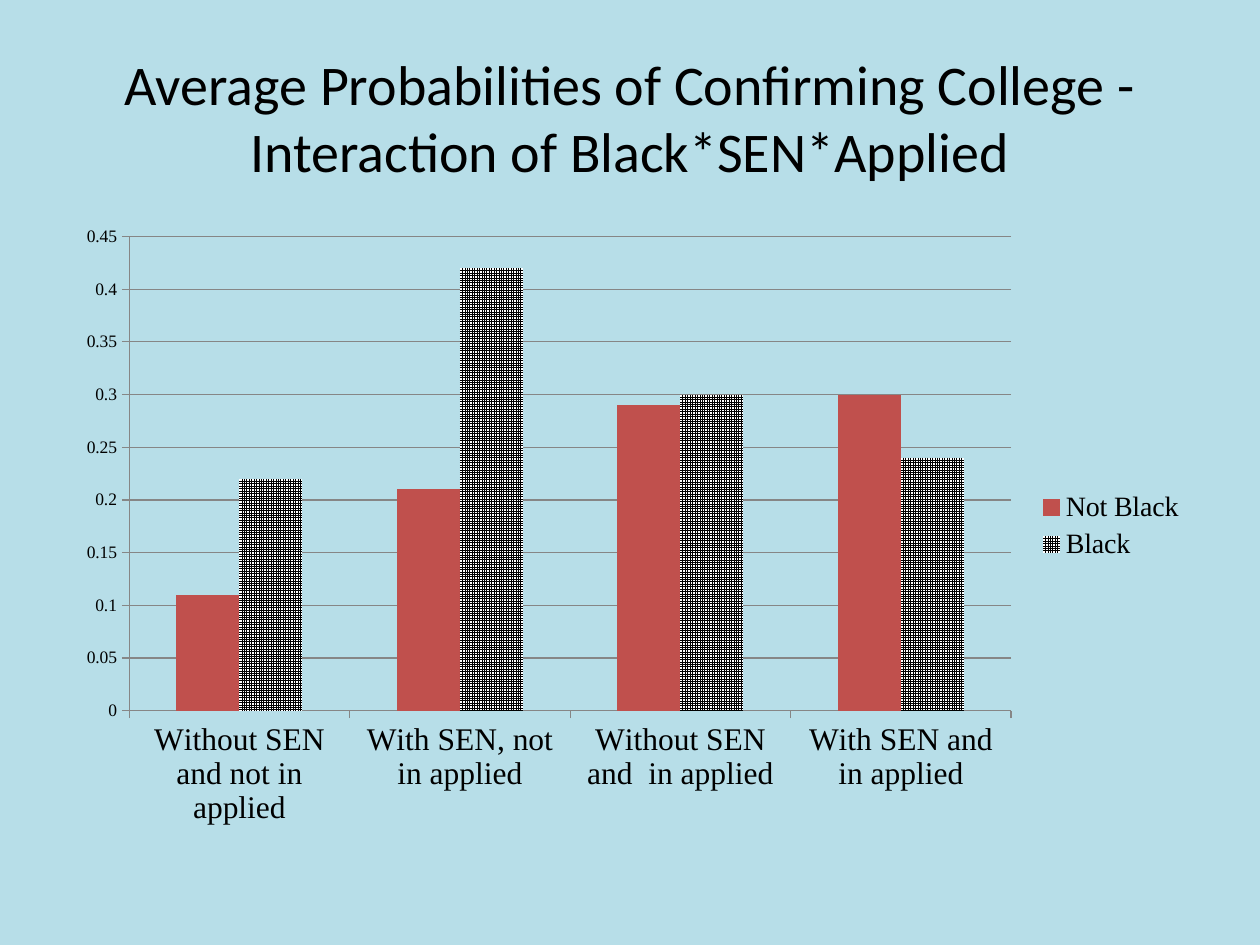
from pptx import Presentation
from pptx.chart.data import CategoryChartData
from pptx.dml.color import RGBColor
from pptx.enum.chart import XL_CHART_TYPE, XL_LEGEND_POSITION, XL_TICK_MARK
from pptx.enum.dml import MSO_PATTERN
from pptx.enum.text import MSO_ANCHOR, PP_ALIGN
from pptx.util import Inches, Pt

BACKGROUND = RGBColor(0xB7, 0xDE, 0xE8)
BLACK = RGBColor(0, 0, 0)
WHITE = RGBColor(0xFF, 0xFF, 0xFF)
RED = RGBColor(0xC0, 0x50, 0x4D)
GRAY = RGBColor(0x86, 0x86, 0x86)

TITLE = "Average Probabilities of Confirming College - Interaction of Black*SEN*Applied"
CATEGORIES = [
    "Without SEN and not in applied",
    "With SEN, not in applied",
    "Without SEN and  in applied",
    "With SEN and in applied",
]
SERIES = {
    "Not Black": (0.11, 0.21, 0.29, 0.3),
    "Black": (0.22, 0.42, 0.3, 0.24),
}


def style_font(font, size, name="Times New Roman"):
    font.name = name
    font.size = Pt(size)
    font.color.rgb = BLACK


def add_title(slide):
    title = slide.shapes.title
    title.left, title.top = Inches(0.5), Inches(0.3)
    title.width, title.height = Inches(9), Inches(1.25)
    tf = title.text_frame
    tf.word_wrap = True
    tf.vertical_anchor = MSO_ANCHOR.MIDDLE
    p = tf.paragraphs[0]
    p.alignment = PP_ALIGN.CENTER
    r = p.add_run()
    r.text = TITLE
    style_font(r.font, 32, "Calibri")


def add_probability_chart(slide):
    data = CategoryChartData(number_format="General")
    data.categories = CATEGORIES
    for name, values in SERIES.items():
        data.add_series(name, values)
    chart = slide.shapes.add_chart(
        XL_CHART_TYPE.COLUMN_CLUSTERED,
        Inches(0.51), Inches(1.7), Inches(9), Inches(4.95), data,
    ).chart
    chart.has_title = False
    style_font(chart.font, 10)

    plot = chart.plots[0]
    plot.vary_by_categories = False
    plot.gap_width = 150
    not_black, black = (s.format.fill for s in plot.series)
    not_black.solid()
    not_black.fore_color.rgb = RED
    black.patterned()
    black.pattern = MSO_PATTERN.SMALL_GRID
    black.fore_color.rgb = BLACK
    black.back_color.rgb = WHITE

    value_axis = chart.value_axis
    value_axis.minimum_scale, value_axis.maximum_scale = 0, 0.45
    value_axis.major_unit = 0.05
    value_axis.has_major_gridlines = True
    value_axis.major_gridlines.format.line.color.rgb = GRAY
    for axis, size in ((chart.category_axis, 18), (value_axis, 10)):
        axis.major_tick_mark = XL_TICK_MARK.OUTSIDE
        axis.format.line.color.rgb = GRAY
        style_font(axis.tick_labels.font, size)

    chart.has_legend = True
    chart.legend.position = XL_LEGEND_POSITION.RIGHT
    chart.legend.include_in_layout = False
    style_font(chart.legend.font, 16)


def main():
    prs = Presentation()
    prs.slide_width, prs.slide_height = Inches(10), Inches(7.5)
    slide = prs.slides.add_slide(prs.slide_layouts[5])
    slide.background.fill.solid()
    slide.background.fill.fore_color.rgb = BACKGROUND
    add_title(slide)
    add_probability_chart(slide)
    prs.save("out.pptx")


if __name__ == "__main__":
    main()
